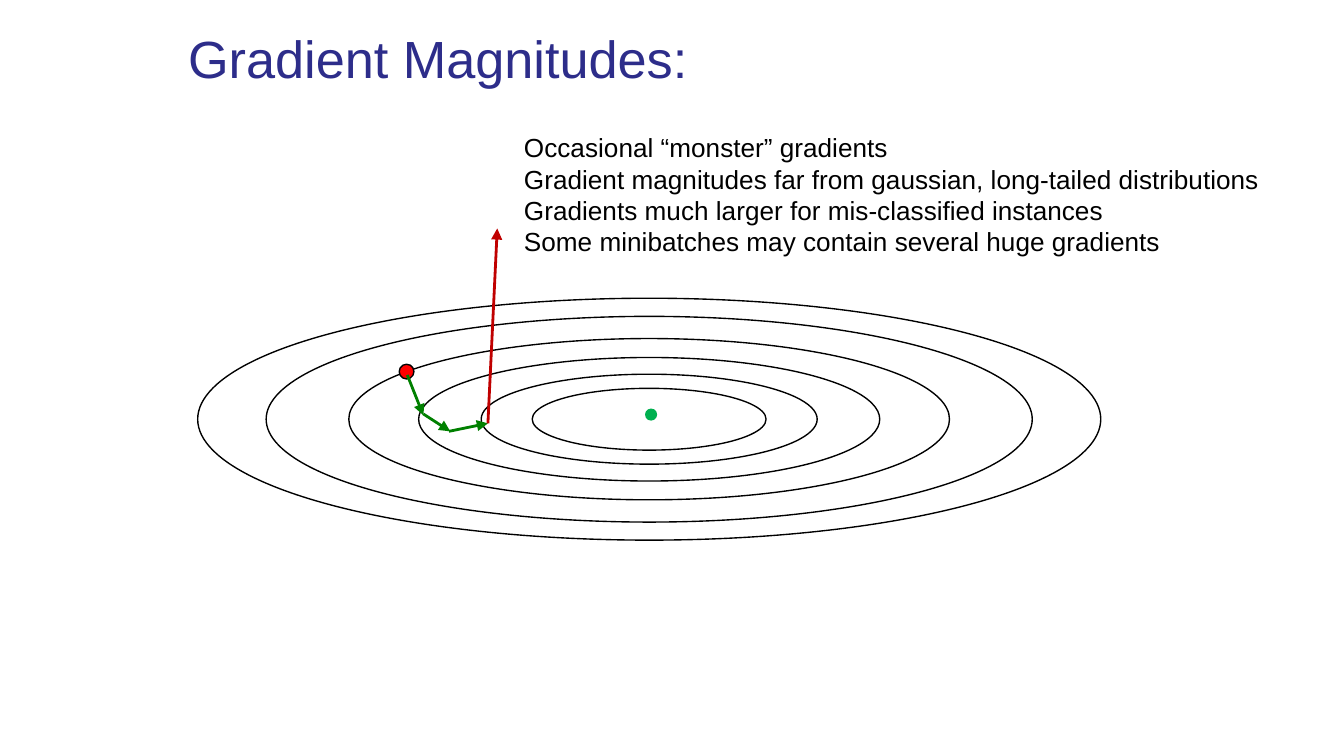
import pptx
import pptx.util
import pptx.dml.color
import pptx.enum.shapes
import pptx.enum.text
import pptx.oxml
import pptx.oxml.ns

Pt = pptx.util.Pt
COLORS = {"title": "2D2D8A", "ink": "000000", "start": "FF0000",
          "minimum": "00B050", "step": "008000", "monster": "C00000"}

TITLE = ["Gradient Magnitudes:"]
NOTES = ["Occasional “monster” gradients",
         "Gradient magnitudes far from gaussian, long-tailed distributions",
         "Gradients much larger for mis-classified instances\v"
         "Some minibatches may contain several huge gradients"]

CENTER = (347.8, 224.6)
CONTOURS = [(125.3, 33.1), (483.8, 129.6), (410.4, 110.2),
            (321.8, 86.4), (247, 66.2), (180, 48.2)]
START = (217.8, 199.1)
MINIMUM = (348.8, 222.1)
STEPS = [("step", (218.2, 200.9), (226.8, 222.5)),
         ("step", (226.8, 221.8), (241.2, 231.1)),
         ("step", (240.5, 231.1), (261.4, 226.8)),
         ("monster", (261.4, 226.8), (266.4, 122.4))]


def rgb(name):
    return pptx.dml.color.RGBColor.from_string(COLORS[name])


def add_ellipse(page, center, width, height, fill=None, line=None):
    shape = page.shapes.add_shape(
        pptx.enum.shapes.MSO_SHAPE.OVAL, Pt(center[0] - width / 2),
        Pt(center[1] - height / 2), Pt(width), Pt(height))
    shape.shadow.inherit = False
    if fill:
        shape.fill.solid()
        shape.fill.fore_color.rgb = rgb(fill)
    else:
        shape.fill.background()
    if line:
        shape.line.color.rgb = rgb(line)
        shape.line.width = Pt(0.75)
    else:
        shape.line.fill.background()


def add_arrow(page, color, start, end):
    arrow = page.shapes.add_connector(
        pptx.enum.shapes.MSO_CONNECTOR.STRAIGHT, *map(Pt, start + end))
    arrow.line.color.rgb = rgb(color)
    arrow.line.width = Pt(1.5)
    qn = pptx.oxml.ns.qn
    properties = arrow.line._get_or_add_ln()
    properties.append(properties.makeelement(qn("a:tailEnd"), {"type": "triangle"}))
    outline = arrow._element.spPr
    outline.append(outline.makeelement(qn("a:effectLst"), {}))


def add_text(page, bounds, lines, size, color, frame_format, spacing=None):
    box = page.shapes.add_textbox(*map(Pt, bounds))
    frame = box.text_frame
    for name, value in frame_format.items():
        setattr(frame, name, value)
    for index, line in enumerate(lines):
        para = frame.paragraphs[0] if index == 0 else frame.add_paragraph()
        para.text = line
        if spacing:
            para.line_spacing = Pt(spacing)
        for span in para.runs:
            for name, value in {"name": "Arial", "size": Pt(size)}.items():
                setattr(span.font, name, value)
            span.font.color.rgb = rgb(color)


def main():
    deck = pptx.Presentation()
    deck.slide_width, deck.slide_height = Pt(720), Pt(405)
    page = deck.slides.add_slide(deck.slide_layouts[6])

    for width, height in CONTOURS:
        add_ellipse(page, CENTER, width, height, line="ink")
    add_ellipse(page, START, 7.9, 7.9, fill="start", line="ink")

    title_format = dict.fromkeys(
        ("margin_left", "margin_top", "margin_right", "margin_bottom"), Pt(5))
    title_format["word_wrap"] = True
    title_format["vertical_anchor"] = pptx.enum.text.MSO_ANCHOR.MIDDLE
    add_text(page, (95.8, 7.9, 522, 46), TITLE, 28, "title", title_format)

    add_ellipse(page, MINIMUM, 6.5, 6.5, fill="minimum")
    for color, start, end in STEPS:
        add_arrow(page, color, start, end)

    notes_format = {"word_wrap": False,
                    "auto_size": pptx.enum.text.MSO_AUTO_SIZE.SHAPE_TO_FIT_TEXT}
    add_text(page, (273.6, 67, 409.7, 74.9), NOTES, 14, "ink", notes_format, 16.8)

    deck.save("out.pptx")


if __name__ == "__main__":
    main()
